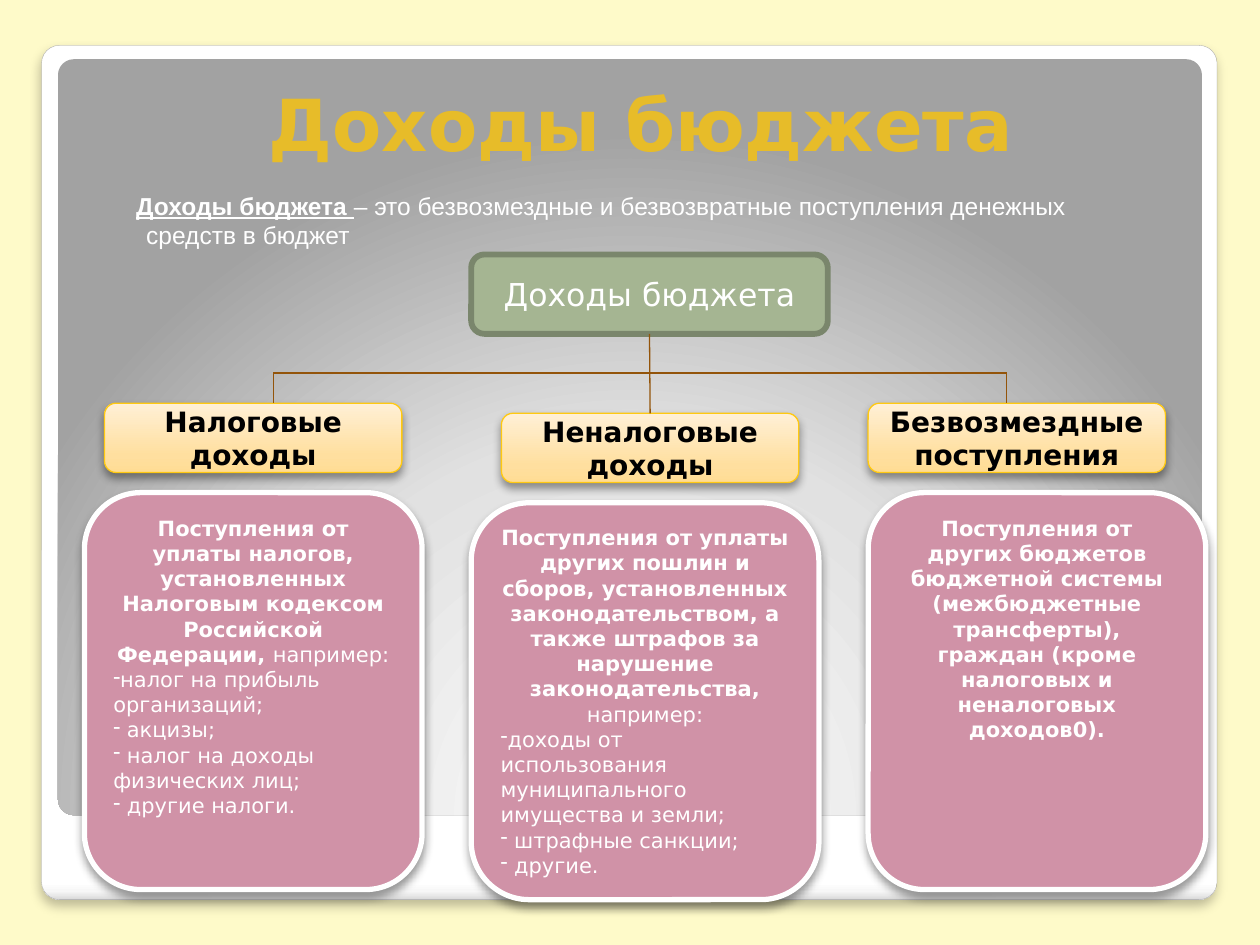
from lxml import etree
from pptx import Presentation
from pptx import util as u
from pptx.dml.color import RGBColor
from pptx.enum import shapes, text
from pptx.oxml import ns

COLORS = {
    "background": "FEFAC9", "frame_line": "A4A4A4", "title": "E7BC29",
    "white": "FFFFFF", "black": "000000", "root": "A5B592",
    "root_line": "7A866C", "heading_line": "FFC911",
    "connector": "93540A", "card": "D092A7",
}
FRAME_STOPS = [(0, "FFFFFF"), (98, "FFFFFF"), (99, "F7F7F7"), (100, "DADADA")]
PANEL_STOPS = [(0, "FFFFFF"), (55, "E1E1E1"), (100, "A2A2A2")]
HEADING_STOPS = [(0, "FFDC94"), (25, "FFDF9F"), (100, "FFF0D6")]
PANEL_CENTER = {"l": 50, "t": 175, "r": 50, "b": -75}
FRAME_SHADOW = (25, 6, 4)
BOX_SHADOW = (40, 5.2, 3)

COLUMNS = [
    {"heading": "Налоговые доходы", "heading_at": (0.83, 3.2),
     "card_at": (0.67, 3.91, 2.68, 3.15), "anchor": text.MSO_ANCHOR.TOP,
     "lead": "Поступления от уплаты налогов, установленных Налоговым кодексом "
             "Российской Федерации, ",
     "tail": "например:",
     "items": ["налог на прибыль организаций;", " акцизы;",
               " налог на доходы физических лиц;", " другие налоги."]},
    {"heading": "Неналоговые доходы", "heading_at": (3.98, 3.28),
     "card_at": (3.74, 3.99, 2.76, 3.15), "anchor": text.MSO_ANCHOR.MIDDLE,
     "lead": "Поступления от уплаты других пошлин и сборов, установленных "
             "законодательством, а также штрафов за нарушение законодательства, ",
     "tail": "например:",
     "items": ["доходы от использования муниципального имущества и земли;",
               " штрафные санкции;", " другие."]},
    {"heading": "Безвозмездные поступления", "heading_at": (6.89, 3.2),
     "card_at": (6.89, 3.91, 2.68, 3.15), "anchor": text.MSO_ANCHOR.TOP,
     "lead": "Поступления от других бюджетов бюджетной системы (межбюджетные "
             "трансферты), граждан (кроме налоговых и неналоговых доходов0).",
     "tail": "", "items": []},
]


def color(name):
    return RGBColor.from_string(COLORS[name])


def add_xml(parent, tag, **attributes):
    values = {key: str(value) for key, value in attributes.items()}
    return etree.SubElement(parent, ns.qn(tag), values)


class SlideBuilder:
    font = "DejaVu Sans"

    def __init__(self, slide):
        self.slide = slide
        fill = slide.background.fill
        fill.solid()
        fill.fore_color.rgb = color("background")

    def style(self, font, size, name, bold=False, face=None):
        font.size = u.Pt(size)
        font.name = face or self.font
        font.bold = bold
        font.color.rgb = color(name)

    def gradient(self, shape, stops, angle=None, center=None):
        shape.fill.gradient()
        gradient = shape.element.spPr.find(ns.qn("a:gradFill"))
        for child in list(gradient):
            gradient.remove(child)
        stop_list = add_xml(gradient, "a:gsLst")
        for position, value in stops:
            stop = add_xml(stop_list, "a:gs", pos=position * 1000)
            add_xml(stop, "a:srgbClr", val=value)
        if center:
            path = add_xml(gradient, "a:path", path="circle")
            sides = {side: value * 1000 for side, value in center.items()}
            add_xml(path, "a:fillToRect", **sides)
        else:
            add_xml(gradient, "a:lin", ang=angle * 60000, scaled=0)

    def shadow(self, shape, alpha, blur, distance):
        effects = shape.element.spPr.find(ns.qn("a:effectLst"))
        outer = add_xml(effects, "a:outerShdw", blurRad=int(u.Pt(blur)),
                        dist=int(u.Pt(distance)), dir=90 * 60000, rotWithShape=0)
        shade = add_xml(outer, "a:srgbClr", val=COLORS["black"])
        add_xml(shade, "a:alpha", val=alpha * 1000)

    def box(self, at, fill=None, line=None, width=0, shadow=None, corner=None):
        shape = self.slide.shapes.add_shape(
            shapes.MSO_SHAPE.ROUNDED_RECTANGLE, *map(u.Inches, at))
        shape.shadow.inherit = False
        if corner:
            shape.adjustments[0] = corner
        if fill:
            shape.fill.solid()
            shape.fill.fore_color.rgb = color(fill)
        if line:
            shape.line.color.rgb = color(line)
            shape.line.width = u.Pt(width)
        else:
            shape.line.fill.background()
        if shadow:
            self.shadow(shape, *shadow)
        shape.text_frame.word_wrap = True
        return shape

    def label(self, shape, wording, size, name, bold=False):
        shape.text_frame.vertical_anchor = text.MSO_ANCHOR.MIDDLE
        paragraph = shape.text_frame.paragraphs[0]
        paragraph.text = wording
        paragraph.alignment = text.PP_ALIGN.CENTER
        self.style(paragraph.font, size, name, bold)

    def title(self, wording, at):
        title = self.slide.shapes.title
        title.left, title.top, title.width, title.height = map(u.Inches, at)
        self.label(title, wording, 41, "title", True)
        title.text_frame.vertical_anchor = text.MSO_ANCHOR.BOTTOM
        title.element.getparent().append(title.element)

    def definition(self, term, meaning, at):
        frame = self.slide.shapes.add_textbox(*map(u.Inches, at)).text_frame
        frame.word_wrap = True
        frame.margin_left = frame.margin_right = u.Inches(0.2)
        frame.margin_top = u.Inches(0.04)
        paragraph = frame.paragraphs[0]
        paragraph.line_spacing = u.Pt(17)
        properties = paragraph._p.get_or_add_pPr()
        properties.set("marL", str(u.Inches(0.29)))
        properties.set("indent", str(u.Inches(-0.08)))
        for wording, is_term in ((term, True), (meaning, False)):
            run = paragraph.add_run()
            run.text = wording
            self.style(run.font, 14, "white", is_term, "Arial")
            run.font.underline = is_term

    def heading(self, wording, at):
        shape = self.box((*at, 2.36, 0.55), None, "heading_line", 0.75, BOX_SHADOW)
        self.gradient(shape, HEADING_STOPS, angle=270)
        self.label(shape, wording, 16, "black", True)
        return shape

    def card(self, column):
        shape = self.box(column["card_at"], "card", "white", 3, BOX_SHADOW)
        frame = shape.text_frame
        frame.vertical_anchor = column["anchor"]
        paragraph = frame.paragraphs[0]
        paragraph.alignment = text.PP_ALIGN.CENTER
        for wording, bold in ((column["lead"], True), (column["tail"], False)):
            if wording:
                run = paragraph.add_run()
                run.text = wording
                self.style(run.font, 12, "white", bold)
        for item in column["items"]:
            paragraph = frame.add_paragraph()
            paragraph.text = item
            paragraph.alignment = text.PP_ALIGN.LEFT
            self.style(paragraph.font, 12, "white")
            properties = paragraph._p.get_or_add_pPr()
            bullet = etree.Element(ns.qn("a:buChar"), {"char": "-"})
            properties.insert_element_before(bullet, "a:tabLst", "a:defRPr", "a:extLst")

    def line(self, start, end):
        connector = self.slide.shapes.add_connector(
            shapes.MSO_CONNECTOR.STRAIGHT, *map(u.Inches, (*start, *end)))
        connector.line.color.rgb = color("connector")
        connector.line.width = u.Pt(0.75)
        add_xml(connector.element.spPr, "a:effectLst")
        return connector


def main():
    presentation = Presentation()
    presentation.slide_width, presentation.slide_height = u.Inches(10), u.Inches(7.5)
    builder = SlideBuilder(presentation.slides.add_slide(presentation.slide_layouts[5]))

    frame = builder.box((0.33, 0.36, 9.33, 6.78), None, "frame_line", 0.16,
                        FRAME_SHADOW, 0.021)
    builder.gradient(frame, FRAME_STOPS, angle=90)
    panel = builder.box((0.46, 0.47, 9.08, 6), corner=0.021)
    builder.gradient(panel, PANEL_STOPS, center=PANEL_CENTER)

    builder.title("Доходы бюджета", (0.59, 0, 9, 1.37))
    builder.definition(
        "Доходы бюджета ",
        "– это безвозмездные и безвозвратные поступления денежных средств в бюджет",
        (0.67, 1.47, 8.59, 0.79))

    root = builder.box((3.74, 2.02, 2.83, 0.63), "root", "root_line", 3.35)
    builder.label(root, "Доходы бюджета", 18, "white")
    headings = [builder.heading(column["heading"], column["heading_at"])
                for column in COLUMNS]

    left, right, branch = 2.17, 7.99, 2.96
    builder.line((left, branch), (right, branch))
    for x in (left, right):
        builder.line((x, branch), (x, 3.2))
    trunk = builder.line((5.16, 2.65), (5.16, 3.28))
    trunk.begin_connect(root, 2)
    trunk.end_connect(headings[1], 0)

    for column in COLUMNS:
        builder.card(column)
    presentation.save("out.pptx")


if __name__ == "__main__":
    main()
